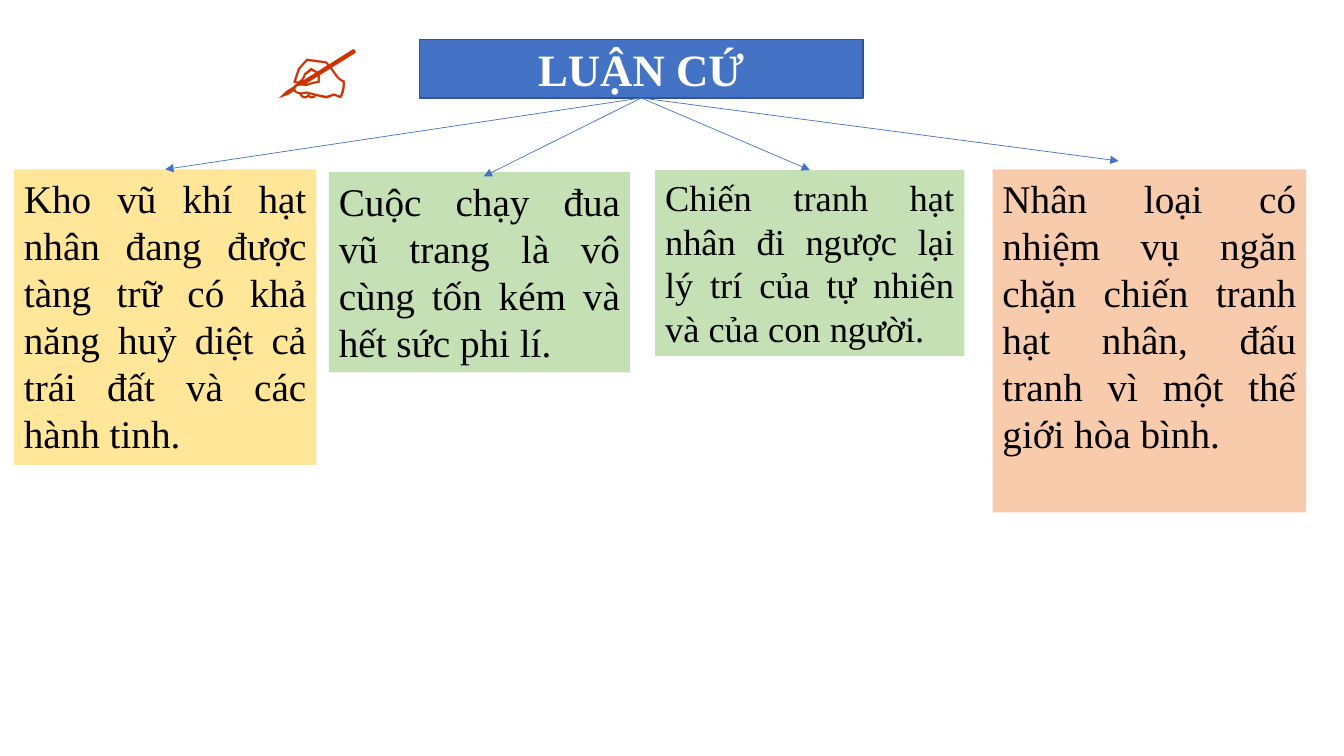
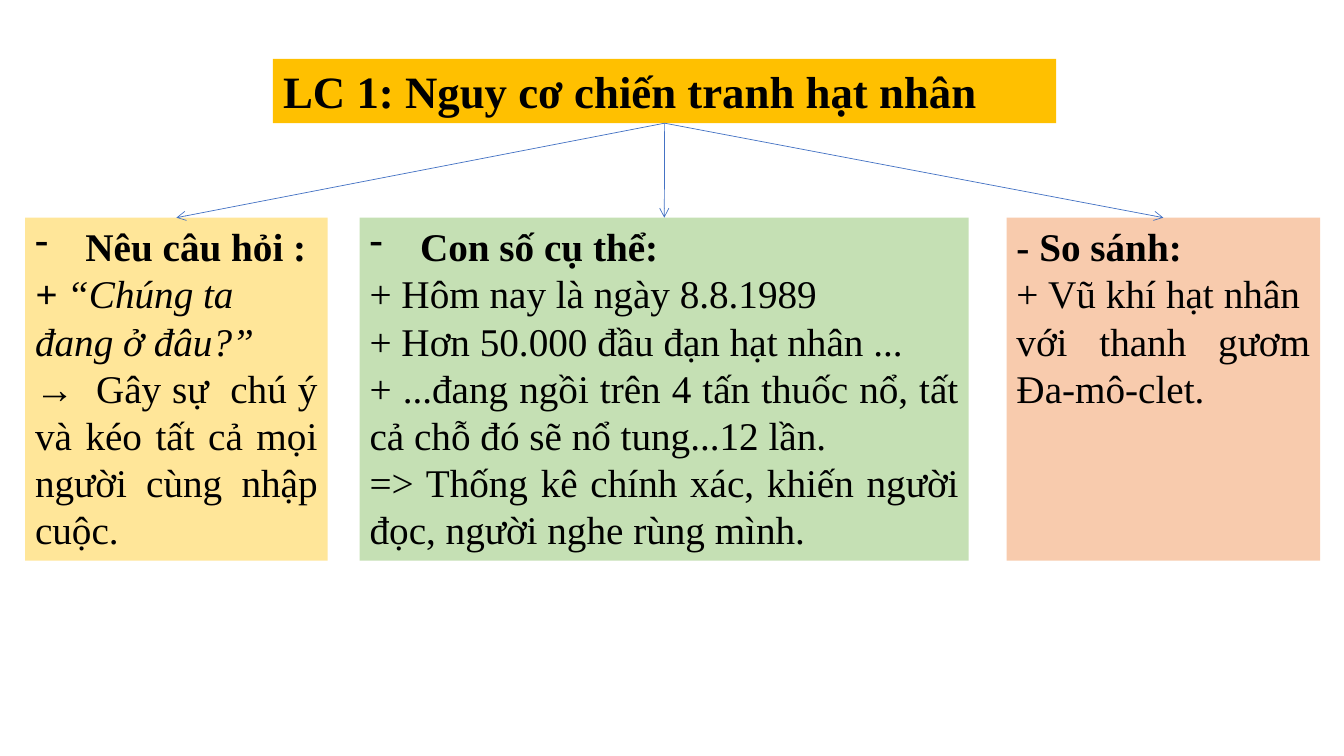
from dataclasses import dataclass

from lxml import etree
from pptx import Presentation
from pptx.dml.color import RGBColor
from pptx.enum.shapes import MSO_CONNECTOR, MSO_SHAPE
from pptx.enum.text import MSO_ANCHOR, MSO_AUTO_SIZE, PP_ALIGN
from pptx.oxml.ns import qn
from pptx.util import Pt

RECTANGLE = MSO_SHAPE.RECTANGLE
STRAIGHT = MSO_CONNECTOR.STRAIGHT
LEFT, CENTER, JUSTIFY = PP_ALIGN.LEFT, PP_ALIGN.CENTER, PP_ALIGN.JUSTIFY
TOP, MIDDLE = MSO_ANCHOR.TOP, MSO_ANCHOR.MIDDLE
NO_AUTOFIT = MSO_AUTO_SIZE.NONE
TOP_SIDE, BOTTOM_SIDE = 0, 2
TITLE_ONLY = 5

FONT = "Times New Roman"
TITLE_SIZE, CARD_SIZE = 32, 28
COLORS = {
    "blue": "4472C4", "navy": "325491", "gold": "FFC000",
    "yellow": "FFE699", "green": "C5E0B4", "peach": "F8CBAD",
    "black": "000000", "white": "FFFFFF", "red": "CC3300",
}


@dataclass
class Line:
    """One paragraph of a card; lead is an opening run set in bold."""
    text: str
    bold: bool = False
    italic: bool = False
    align: PP_ALIGN = JUSTIFY
    bullet: bool = False
    lead: str = ""


def color(name):
    return RGBColor.from_string(COLORS[name])


def paint(shape, fill, line=None):
    shape.fill.solid()
    shape.fill.fore_color.rgb = color(fill)
    if line:
        shape.line.color.rgb = color(line)
        shape.line.width = Pt(1)
    else:
        shape.line.fill.background()


def set_font(paragraph, size, color_name, bold=False, italic=False, name=FONT):
    font = paragraph.font
    font.name, font.size = name, Pt(size)
    font.bold, font.italic = bold, italic
    font.color.rgb = color(color_name)


def add_dash_bullet(paragraph):
    properties = paragraph._p.get_or_add_pPr()
    properties.set("marL", str(Pt(36)))
    properties.set("indent", str(Pt(-36)))
    bullet = etree.Element(qn("a:buChar"), char="-")
    properties.insert(0, bullet)
    bullet.addprevious(etree.Element(qn("a:buFontTx")))


def add_title(slide, text, box, fill, line=None, geometry="rect",
              text_color="black", align=LEFT, anchor=TOP):
    title = slide.shapes.title
    title.left, title.top, title.width, title.height = map(Pt, box)
    preset = etree.SubElement(title._element.spPr, qn("a:prstGeom"), prst=geometry)
    etree.SubElement(preset, qn("a:avLst"))
    paint(title, fill, line)
    frame = title.text_frame
    frame.auto_size, frame.vertical_anchor = NO_AUTOFIT, anchor
    frame.text = text
    paragraph = frame.paragraphs[0]
    paragraph.alignment = align
    set_font(paragraph, TITLE_SIZE, text_color, bold=True)
    return title


def add_card(slide, box, fill, lines, size=CARD_SIZE):
    card = slide.shapes.add_shape(RECTANGLE, *map(Pt, box))
    card.shadow.inherit = False
    paint(card, fill)
    frame = card.text_frame
    frame.word_wrap, frame.vertical_anchor = True, TOP
    for index, line in enumerate(lines):
        paragraph = frame.add_paragraph() if index else frame.paragraphs[0]
        paragraph.alignment = line.align
        set_font(paragraph, size, "black", line.bold, line.italic)
        if line.bullet:
            add_dash_bullet(paragraph)
        if line.lead:
            lead = paragraph.add_run()
            lead.text, lead.font.bold = line.lead, True
        paragraph.add_run().text = line.text
    return card


def add_arrow(slide, title, head, card=None, point=(0, 0)):
    """Arrow from the title to the top of a card, or to a free point."""
    arrow = slide.shapes.add_connector(STRAIGHT, 0, 0, *map(Pt, point))
    arrow.begin_connect(title, BOTTOM_SIDE)
    if card is not None:
        arrow.end_connect(card, TOP_SIDE)
    arrow.line.color.rgb = color("blue")
    arrow.line.width = Pt(0.5)
    etree.SubElement(arrow.line._get_or_add_ln(), qn("a:tailEnd"), type=head)
    etree.SubElement(arrow._element.spPr, qn("a:effectLst"))


def add_symbol(slide, text, box):
    symbol = slide.shapes.add_textbox(*map(Pt, box))
    symbol.text_frame.word_wrap = True
    symbol.text_frame.text = text
    set_font(symbol.text_frame.paragraphs[0], 66, "red", bold=True, name="Arial")


def build_arguments(slide):
    title = add_title(slide, "LUẬN CỨ", (299.5, 28, 317, 42), "blue", "navy",
                      "roundRect", "white", CENTER, MIDDLE)
    add_symbol(slide, "✍", (189.5, 0, 89, 87))

    # Four arguments: box, fill, text size, text, free arrow end
    arguments = [
        ((10, 121, 216, 211), "yellow", 28,
         "Kho vũ khí hạt nhân đang được tàng trữ có khả năng huỷ diệt cả "
         "trái đất và các hành tinh.", None),
        ((235, 123, 215, 143), "green", 28,
         "Cuộc chạy đua vũ trang là vô cùng tốn kém và hết sức phi lí.",
         (345.5, 126)),
        ((468, 121.5, 221, 133), "green", 26,
         "Chiến tranh hạt nhân đi ngược lại lý trí của tự nhiên và của "
         "con người.", None),
        ((709, 121, 224, 245), "peach", 28,
         "Nhân loại có nhiệm vụ ngăn chặn chiến tranh hạt nhân, đấu tranh "
         "vì một thế giới hòa bình.", (799, 115)),
    ]
    for box, fill, size, text, point in arguments:
        card = add_card(slide, box, fill, [Line(text)], size)
        if point:
            add_arrow(slide, title, "triangle", point=point)
        else:
            add_arrow(slide, title, "triangle", card)


def build_first_argument(slide):
    title = add_title(slide, "LC 1: Nguy cơ chiến tranh hạt nhân",
                      (195, 42, 559.5, 46), "gold")

    # Three cards in one row: left, width, fill, lines
    top, height = 155.5, 245
    cards = [
        (18, 216, "yellow", [
            Line("Nêu câu hỏi :", bold=True, align=LEFT, bullet=True),
            Line("“Chúng ta đang ở đâu?”", italic=True, align=LEFT, lead="+ "),
            Line("→  Gây sự  chú ý và kéo tất cả mọi người cùng nhập cuộc."),
        ]),
        (257, 435, "green", [
            Line("Con số cụ thể:", bold=True, bullet=True),
            Line("+ Hôm nay là ngày 8.8.1989"),
            Line("+ Hơn 50.000 đầu đạn hạt nhân ..."),
            Line("+ ...đang ngồi trên 4 tấn thuốc nổ, tất cả chỗ đó sẽ nổ "
                 "tung...12 lần."),
            Line("=> Thống kê chính xác, khiến người đọc, người nghe rùng mình."),
        ]),
        (719, 224, "peach", [
            Line("- So sánh:", bold=True),
            Line("+ Vũ khí hạt nhân  với thanh gươm Đa-mô-clet."),
        ]),
    ]
    for left, width, fill, lines in cards:
        card = add_card(slide, (left, top, width, height), fill, lines)
        add_arrow(slide, title, "arrow", card)


def main():
    presentation = Presentation()
    presentation.slide_width, presentation.slide_height = Pt(960), Pt(540)
    layout = presentation.slide_layouts[TITLE_ONLY]
    for build in (build_arguments, build_first_argument):
        build(presentation.slides.add_slide(layout))
    presentation.save("out.pptx")


if __name__ == "__main__":
    main()
